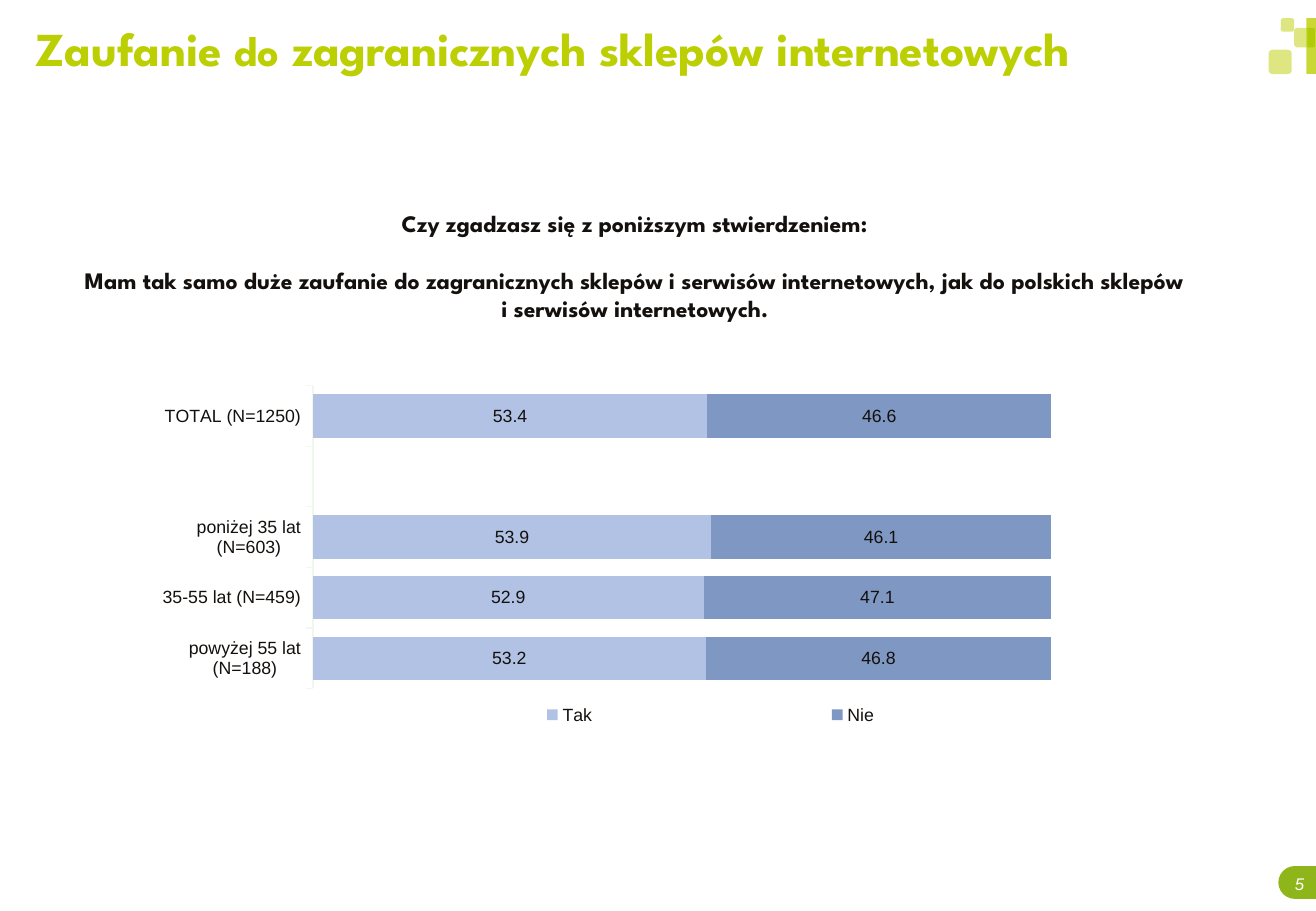
from lxml import etree
from pptx import Presentation
from pptx.chart.data import CategoryChartData
from pptx.dml.color import RGBColor
from pptx.enum.chart import XL_CHART_TYPE, XL_LABEL_POSITION, XL_LEGEND_POSITION, XL_TICK_MARK
from pptx.enum.shapes import MSO_SHAPE
from pptx.enum.text import MSO_AUTO_SIZE, PP_ALIGN
from pptx.oxml import parse_xml
from pptx.oxml.ns import nsdecls, qn
from pptx.util import Pt

STACK = XL_CHART_TYPE.BAR_STACKED_100
MIDDLE = XL_LABEL_POSITION.CENTER
BOTTOM = XL_LEGEND_POSITION.BOTTOM
OUT, NONE = XL_TICK_MARK.OUTSIDE, XL_TICK_MARK.NONE
RECT, ROUND, TAB = MSO_SHAPE.RECTANGLE, MSO_SHAPE.ROUNDED_RECTANGLE, MSO_SHAPE.ROUND_2_SAME_RECTANGLE
GROW = MSO_AUTO_SIZE.SHAPE_TO_FIT_TEXT
LEFT, CENTER = PP_ALIGN.LEFT, PP_ALIGN.CENTER

PX = 9144
COLORS = {
    "lime": "BCCF03", "leaf": "7CBB26", "green": "8EB519", "white": "FFFFFF",
    "ink": "13100D", "axis": "F0F7EC", "yes": "B1C2E5", "no": "7F97C3",
}


def rgb(name):
    return RGBColor.from_string(COLORS[name])


def place(mode, x, y, w, h):
    parts = [("xMode", "edge"), ("yMode", "edge"), ("x", x), ("y", y), ("w", w), ("h", h)]
    if mode:
        parts.insert(0, ("layoutTarget", mode))
    body = "".join(f'<c:{tag} val="{val}"/>' for tag, val in parts)
    return parse_xml(f'<c:layout {nsdecls("c")}><c:manualLayout>{body}</c:manualLayout></c:layout>')


class Deck:
    head, plain = "League Spartan", "Arial"

    def __init__(self, wide, high):
        self.file = Presentation()
        self.file.slide_width, self.file.slide_height = wide * PX, high * PX
        self.slide = self.file.slides.add_slide(self.file.slide_layouts[6])

    def style(self, font, size, color="ink", face=None, bold=False, italic=False):
        font.name, font.size = face or self.plain, Pt(size)
        font.bold, font.italic = bold, italic
        font.color.rgb = rgb(color)

    def shape(self, kind, at, color, alpha=100, turn=0, adjust=()):
        item = self.slide.shapes.add_shape(kind, *(n * PX for n in at))
        item.shadow.inherit = False
        item.rotation = turn
        for i, val in enumerate(adjust):
            item.adjustments[i] = val
        item.fill.solid()
        item.fill.fore_color.rgb = rgb(color)
        item.line.fill.background()
        if alpha < 100:
            tint = item.fill._xPr.find(".//" + qn("a:srgbClr"))
            etree.SubElement(tint, qn("a:alpha")).set("val", str(alpha * 1000))

    def text(self, paras, at, align=LEFT, inset=(10, 5), wrap=True, grow=False, gap=0, trail=0, **look):
        frame = self.slide.shapes.add_textbox(*(n * PX for n in at)).text_frame
        frame.word_wrap = wrap
        frame.margin_left = frame.margin_right = inset[0] * PX
        frame.margin_top = frame.margin_bottom = inset[1] * PX
        if grow:
            frame.auto_size = GROW
        for i, runs in enumerate(paras):
            para = frame.add_paragraph() if i else frame.paragraphs[0]
            para.alignment = align
            if i:
                para.space_before = Pt(gap)
            elif trail:
                para._p.get_or_add_pPr().set("marR", str(trail * PX))
            for words, size in runs:
                run = para.add_run()
                run.text = words
                self.style(run.font, size, **look)

    def chart(self, cats, rows, at, size):
        data = CategoryChartData(number_format="0.0")
        data.categories = cats
        for name, vals, _ in rows:
            data.add_series(name, vals)
        chart = self.slide.shapes.add_chart(STACK, *(n * PX for n in at), data).chart
        self.style(chart.font, size)
        chart.has_title = False
        plot = chart.plots[0]
        plot.gap_width, plot.overlap, plot.vary_by_categories = 40, 100, False
        for line, (_, _, color) in zip(plot.series, rows):
            line.format.fill.solid()
            line.format.fill.fore_color.rgb = rgb(color)
            line.invert_if_negative = False
        plot.has_data_labels = True
        tags = plot.data_labels
        tags.show_value, tags.position = True, MIDDLE
        tags.number_format, tags.number_format_is_linked = "0.0", False
        self.style(tags.font, size)
        axis = chart.category_axis
        axis.reverse_order = True
        axis.major_tick_mark, axis.minor_tick_mark = OUT, NONE
        axis.format.line.color.rgb = rgb("axis")
        axis.format.line.width = Pt(0.75)
        self.style(axis.tick_labels.font, size)
        scale = chart.value_axis
        scale.minimum_scale = 0
        scale.has_major_gridlines = False
        scale.visible = False
        chart.has_legend = True
        key = chart.legend
        key.position, key.include_in_layout = BOTTOM, False
        self.style(key.font, size)
        for old in key._element.findall(qn("c:layout")):
            key._element.remove(old)
        key._element.find(qn("c:legendPos")).addnext(place("", 0.16, 0.78, 0.84, 0.07))
        area = chart._chartSpace.chart.plotArea
        for old in area.findall(qn("c:layout")):
            area.remove(old)
        area.insert(0, place("inner", 0.16, 0, 0.78, 0.75))


def main():
    deck = Deck(1083, 750)
    deck.shape(TAB, (1054, 711, 27, 31), "green", turn=270, adjust=(0.5, 0))
    deck.text([[("5", 10)]], (1061, 719, 17, 17), align=CENTER, inset=(0, 0),
              wrap=False, grow=True, color="white", italic=True)
    for at in ((1044, 41, 19, 20), (1065, 23, 15, 16), (1054, 15, 11, 11)):
        deck.shape(ROUND, at, "lime", alpha=50)
    deck.shape(TAB, (1071, 28, 16, 6), "leaf", turn=90)
    deck.shape(RECT, (1075, 15, 8, 46), "lime", alpha=80)
    deck.text([[("Zaufanie ", 28), ("do", 25), (" zagranicznych sklepów internetowych", 28)]],
              (29, 11, 1004, 85), inset=(0, 5), face=deck.head, color="lime", bold=True)
    deck.chart(
        ["TOTAL (N=1250)", "", "poniżej 35 lat (N=603)", "35-55 lat (N=459)", "powyżej 55 lat (N=188)"],
        [("Tak", (53.4, None, 53.9, 52.9, 53.2), "yes"),
         ("Nie", (46.6, None, 46.1, 47.1, 46.8), "no")],
        (133, 317, 779, 333), 10.5)
    deck.text([[("Czy zgadzasz się z poniższym stwierdzeniem:", 14)],
               [("Mam tak samo duże zaufanie do zagranicznych sklepów i serwisów internetowych, "
                 "jak do polskich sklepów i serwisów internetowych.", 14)]],
              (57, 167, 948, 104), align=CENTER, grow=True, gap=17, trail=17, face=deck.head, bold=True)
    deck.file.save("out.pptx")


if __name__ == "__main__":
    main()
